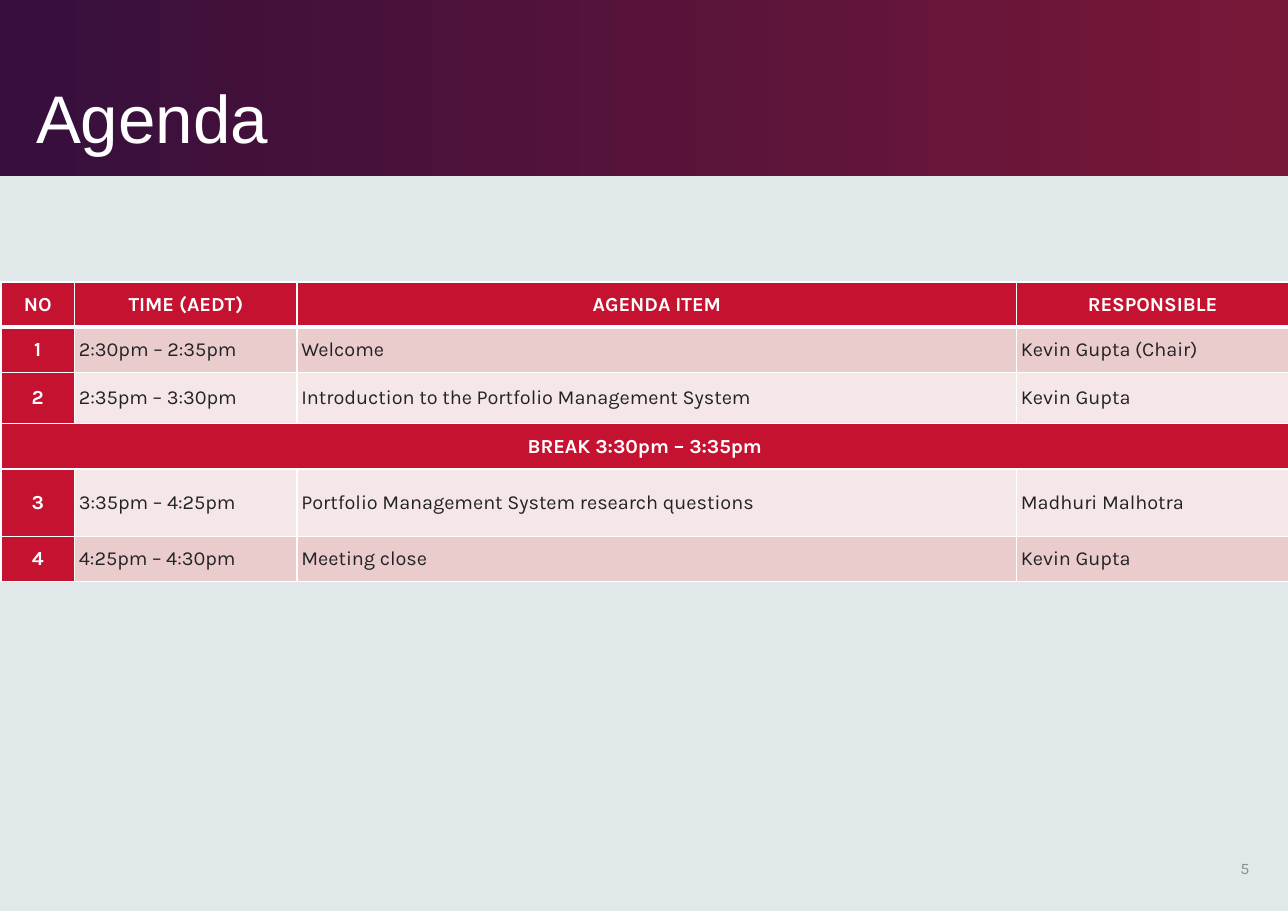
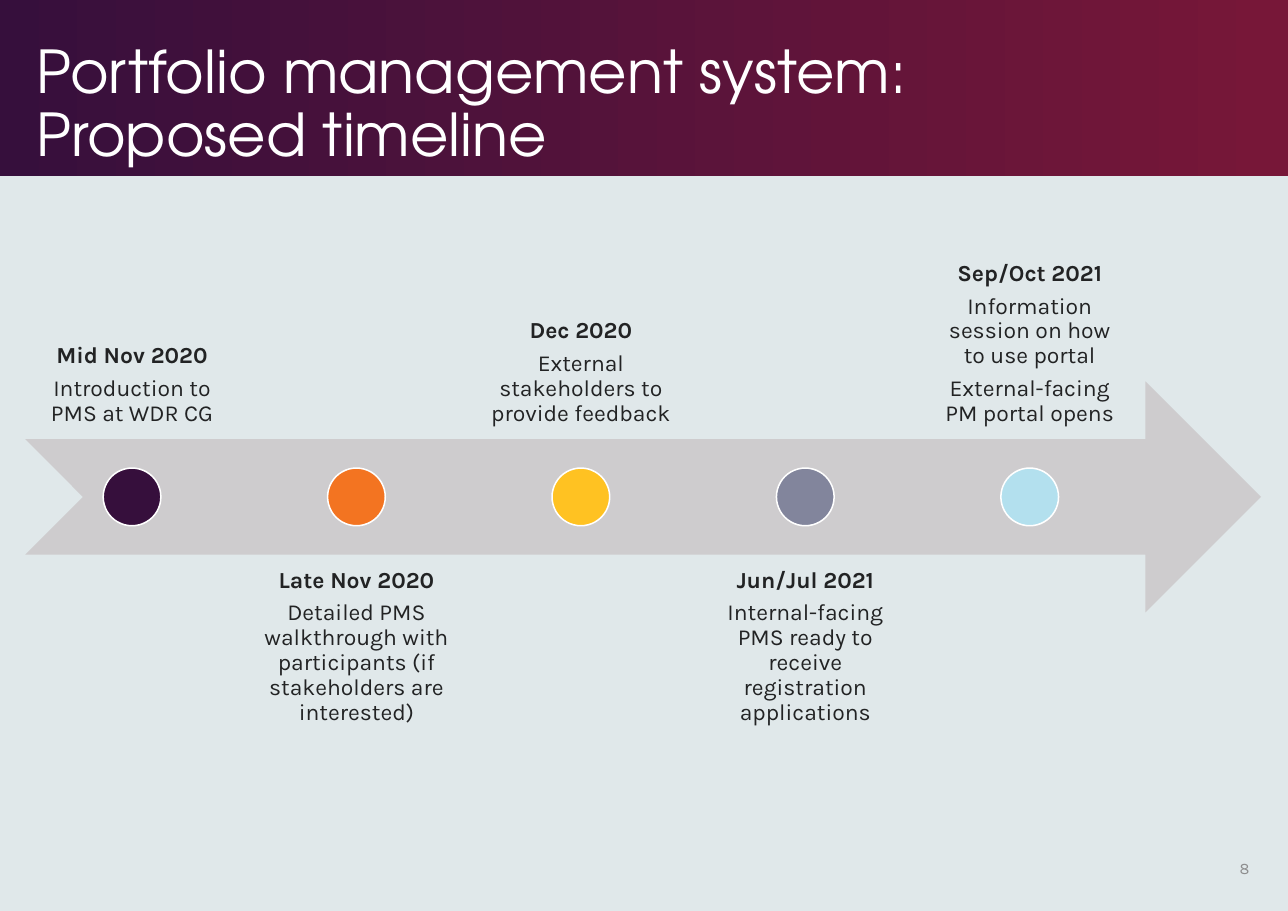
import pptx
import pptx.dml.color
import pptx.enum.shapes
import pptx.enum.text
import pptx.oxml.ns
import pptx.util
from lxml import etree

Cm = pptx.util.Cm
Pt = pptx.util.Pt
SHAPE = pptx.enum.shapes.MSO_SHAPE
ALIGN = pptx.enum.text.PP_ALIGN
ANCHOR = pptx.enum.text.MSO_ANCHOR
qn = pptx.oxml.ns.qn

WIDTH, HEIGHT = 29.7, 21
MARGIN = 0.58
BAND_HEIGHT = 4.06
BODY_FONT = "Karla"
PAPER, WHITE, INK, GREY = "E0E8EA", "FFFFFF", "222324", "8D8D8E"
PLUM, MAROON, RED = "360F3C", "771738", "C41230"
ROW_FILLS = ["F5E7E8", "EACCCD"]

AGENDA_COLUMNS = [1.7, 5.13, 16.59, 6.27]
AGENDA_HEIGHTS = [1.04, 1.04, 1.19, 1.04, 1.55, 1.04]
AGENDA = [
    ["NO", "TIME (AEDT)", "AGENDA ITEM", "RESPONSIBLE"],
    ["1", "2:30pm – 2:35pm", "Welcome", "Kevin Gupta (Chair)"],
    ["2", "2:35pm – 3:30pm", "Introduction to the Portfolio Management System", "Kevin Gupta"],
    ["BREAK 3:30pm – 3:35pm"],
    ["3", "3:35pm – 4:25pm", "Portfolio Management System research questions", "Madhuri Malhotra"],
    ["4", "4:25pm – 4:30pm", "Meeting close", "Kevin Gupta"],
]

MILESTONES = [
    (PLUM, ["Mid Nov 2020", "Introduction to PMS at WDR CG"]),
    ("F37421", ["Late Nov 2020",
                "Detailed PMS walkthrough with participants (if stakeholders are interested)"]),
    ("FFC222", ["Dec 2020", "External stakeholders to provide feedback"]),
    ("82859C", ["Jun/Jul 2021",
                "Internal-facing PMS ready to receive registration applications"]),
    ("B3E0EE", ["Sep/Oct 2021", "Information session on how to use portal",
                "External-facing PM portal opens"]),
]


def rgb(value):
    return pptx.dml.color.RGBColor.from_string(value)


def paint(target, color):
    target.fill.solid()
    target.fill.fore_color.rgb = rgb(color)


def style(p, size, color, bold=False, font=BODY_FONT, align=ALIGN.LEFT):
    p.alignment = align
    p.font.name = font
    p.font.size = Pt(size)
    p.font.bold = bold
    p.font.color.rgb = rgb(color)


def add_shape(slide, kind, left, top, width, height, color, outline=None):
    sp = slide.shapes.add_shape(kind, Cm(left), Cm(top), Cm(width), Cm(height))
    sp.shadow.inherit = False
    paint(sp, color)
    if outline:
        sp.line.color.rgb = rgb(outline)
        sp.line.width = Pt(1)
    else:
        sp.line.fill.background()
    return sp


def add_text_frame(slide, left, top, width, height, anchor):
    sp = slide.shapes.add_textbox(Cm(left), Cm(top), Cm(width), Cm(height))
    tf = sp.text_frame
    tf.word_wrap = True
    tf.vertical_anchor = anchor
    return tf


def add_band(slide):
    layout = slide.slide_layout
    band = add_shape(slide, SHAPE.RECTANGLE, 0, 0, WIDTH, BAND_HEIGHT, PLUM)
    band.fill.gradient()
    band.fill.gradient_angle = 0
    for stop, color, position in zip(band.fill.gradient_stops, [PLUM, MAROON], [0, 0.99]):
        stop.color.rgb = rgb(color)
        stop.position = position
    band.element.nvSpPr.cNvPr.id = 20
    layout.shapes.element.insert(2, band.element)


def add_slide(prs, title, number, top, width, size, font):
    slide = prs.slides.add_slide(prs.slide_layouts[5])
    sp = slide.shapes.title
    sp.left, sp.top, sp.width, sp.height = Cm(MARGIN), Cm(top), Cm(width), Cm(3.63)
    tf = sp.text_frame
    tf.text = title
    tf.word_wrap = True
    tf.auto_size = pptx.enum.text.MSO_AUTO_SIZE.NONE
    tf.vertical_anchor = ANCHOR.BOTTOM
    p = tf.paragraphs[0]
    p.line_spacing = 0.9
    style(p, size, WHITE, font=font)

    tf = add_text_frame(slide, 27.66, 19.46, 1.4, 1.12, ANCHOR.MIDDLE)
    tf.text = number
    style(tf.paragraphs[0], 10.5, GREY, align=ALIGN.RIGHT)
    return slide


def set_borders(cell, top, bottom):
    tc_pr = cell._tc.get_or_add_tcPr()
    sides = [("lnL", 1), ("lnR", 1), ("lnT", top), ("lnB", bottom)]
    for i, (side, width) in enumerate(sides):
        ln = etree.Element(qn("a:" + side), w=str(Pt(width)))
        fill = etree.SubElement(ln, qn("a:solidFill"))
        etree.SubElement(fill, qn("a:srgbClr"), val=WHITE)
        tc_pr.insert(i, ln)


def add_agenda(slide):
    frame = slide.shapes.add_table(
        len(AGENDA), len(AGENDA_COLUMNS), Cm(0.02), Cm(6.5),
        Cm(sum(AGENDA_COLUMNS)), Cm(sum(AGENDA_HEIGHTS)))
    table = frame.table
    for column, width in zip(table.columns, AGENDA_COLUMNS):
        column.width = Cm(width)
    for i, (texts, height) in enumerate(zip(AGENDA, AGENDA_HEIGHTS)):
        table.rows[i].height = Cm(height)
        is_break = len(texts) == 1
        for j, cell in enumerate(table.rows[i].cells):
            strong = i == 0 or j == 0 or is_break
            paint(cell, RED if strong else ROW_FILLS[i % 2])
            set_borders(cell, 3 if i == 1 else 1, 3 if i == 0 else 1)
            cell.margin_left = cell.margin_right = Cm(0.1)
            cell.margin_top = cell.margin_bottom = Cm(0.1)
            cell.vertical_anchor = ANCHOR.MIDDLE
            if j < len(texts):
                cell.text = texts[j]
            style(cell.text_frame.paragraphs[0], 13, WHITE if strong else INK, strong,
                  align=ALIGN.CENTER if strong else ALIGN.LEFT)
        if is_break:
            table.cell(i, 0).merge(table.cell(i, len(AGENDA_COLUMNS) - 1))


def add_label(slide, texts, left, top, width, height, anchor):
    tf = add_text_frame(slide, left, top, width, height, anchor)
    tf.margin_left = tf.margin_right = tf.margin_top = tf.margin_bottom = Cm(0.3)
    for i, text in enumerate(texts):
        p = tf.add_paragraph() if i else tf.paragraphs[0]
        p.text = text
        p.line_spacing = 0.9
        if i:
            p.space_before = Pt(5.25)
        style(p, 15, INK, i == 0, align=ALIGN.CENTER)


def add_timeline(slide):
    arrow_top, arrow_height = 8.79, 5.33
    label_width, pitch, dot = 4.93, 5.175, 1.33
    add_shape(slide, SHAPE.NOTCHED_RIGHT_ARROW, MARGIN, arrow_top, 28.5, arrow_height, "CECCCE")
    for i, (color, texts) in enumerate(MILESTONES):
        left = MARGIN + i * pitch
        above = i % 2 == 0
        add_label(slide, texts, left, 4.8 if above else 12.8, label_width, arrow_height,
                  ANCHOR.BOTTOM if above else ANCHOR.TOP)
        add_shape(slide, SHAPE.OVAL, left + (label_width - dot) / 2,
                  arrow_top + (arrow_height - dot) / 2, dot, dot, color, WHITE)


def main():
    prs = pptx.Presentation()
    prs.slide_width, prs.slide_height = Cm(WIDTH), Cm(HEIGHT)
    paint(prs.slide_master.background, PAPER)

    agenda = add_slide(prs, "Agenda", "5", 0.13, 27.94, 44, "Arial")
    add_band(agenda)
    add_agenda(agenda)

    timeline = add_slide(prs, "Portfolio management system: Proposed timeline", "8",
                         0.41, 21.92, 38.6, "TeX Gyre Adventor")
    add_timeline(timeline)
    prs.save("out.pptx")


if __name__ == "__main__":
    main()
